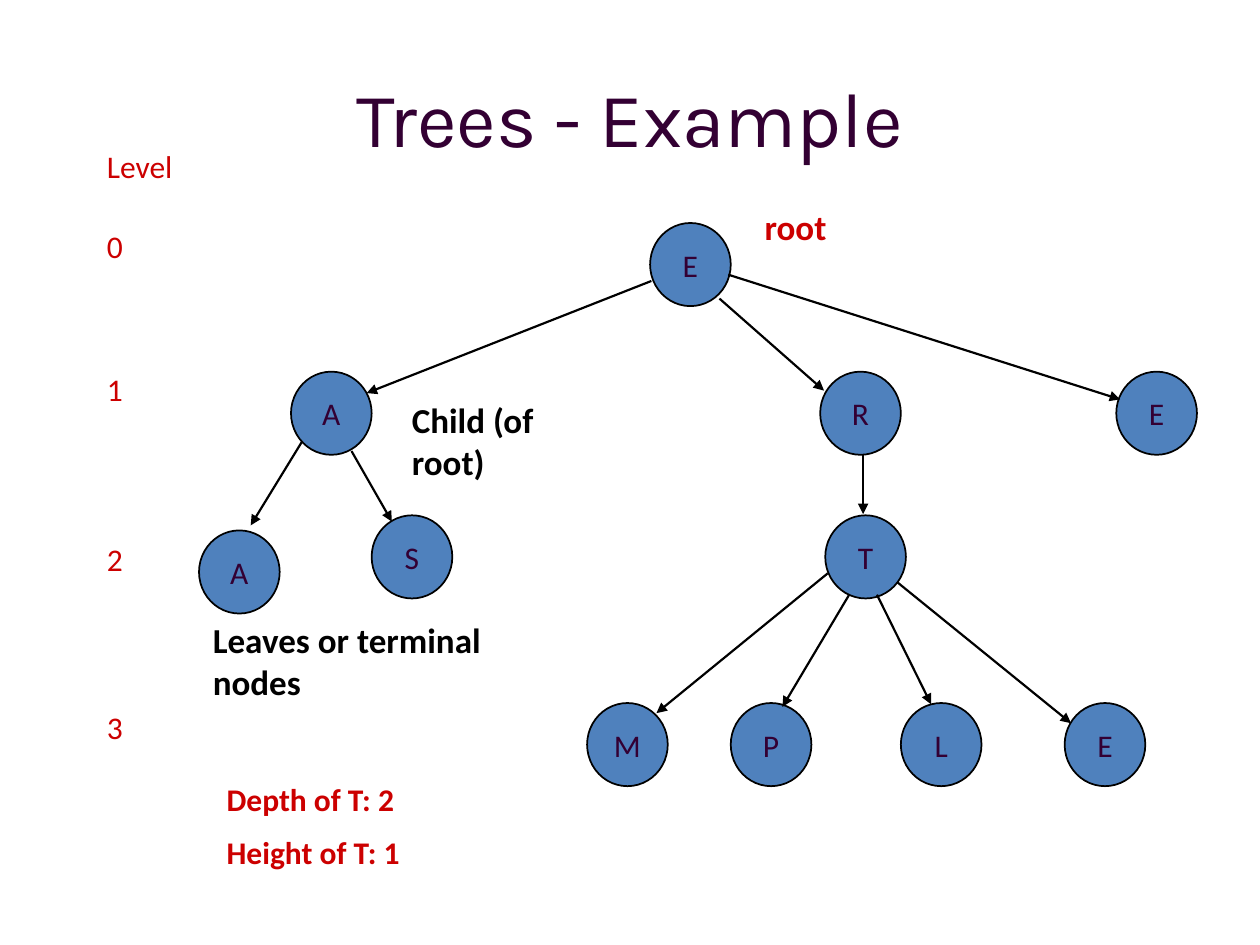
from dataclasses import dataclass

from lxml.etree import SubElement
from pptx import Presentation
from pptx.dml.color import RGBColor
from pptx.enum.shapes import MSO_CONNECTOR, MSO_SHAPE
from pptx.enum.text import MSO_ANCHOR, PP_ALIGN
from pptx.oxml.ns import qn
from pptx.util import Inches, Pt


@dataclass(frozen=True)
class Theme:
    heading_font: str = "Karla"
    body_font: str = "Calibri"
    plum: RGBColor = RGBColor(0x33, 0x00, 0x33)
    red: RGBColor = RGBColor(0xCC, 0x00, 0x00)
    black: RGBColor = RGBColor(0, 0, 0)
    node_fill: RGBColor = RGBColor(0x4F, 0x81, 0xBD)
    title_size: int = 44
    note_size: int = 20
    text_size: int = 18
    node_line: float = 1
    edge_line: float = 1.25


THEME = Theme()
NODE_WIDTH, NODE_HEIGHT = 0.64, 0.66

# Positions below are in inches from the top left of the tree's box.
LEAF_ROW = 4.08
NODES = [
    ("E", 3.66, 0.27),
    ("A", 0.81, 1.45), ("R", 5.01, 1.45), ("E", 7.36, 1.45),
    ("A", 0.08, 2.71), ("S", 1.45, 2.59), ("T", 5.05, 2.59),
    ("M", 3.16, LEAF_ROW), ("P", 4.3, LEAF_ROW),
    ("L", 5.65, LEAF_ROW), ("E", 6.95, LEAF_ROW),
]
EDGES = [
    # root to its children
    ((3.67, 0.73), (1.41, 1.62)),
    ((4.21, 0.87), (5.04, 1.6)),
    ((4.28, 0.68), (7.39, 1.67)),
    # A to its children
    ((0.9, 2.0), (0.49, 2.67)),
    ((1.29, 2.08), (1.61, 2.64)),
    # R to T
    ((5.35, 2.11), (5.35, 2.58)),
    # T to its children
    ((5.07, 3.05), (3.71, 4.16)),
    ((5.24, 3.22), (4.71, 4.11)),
    ((5.46, 3.22), (5.89, 4.09)),
    ((5.62, 3.12), (7.0, 4.24)),
]
NOTES = [
    (["root"], (4.47, 0.08, 0.92, 0.43), THEME.note_size, THEME.red),
    (["Leaves or terminal nodes"], (0.09, 3.36, 2.35, 0.77), THEME.note_size, THEME.black),
    (["Child (of root)"], (1.67, 1.61, 1.75, 0.77), THEME.note_size, THEME.black),
    (["Depth of T: 2", "Height of T: 1"], (0.2, 4.64, 2.72, 1.1), THEME.text_size, THEME.red),
]
LEVELS = [("Level", 0, 1.14), ("0", 0.63, 0.54), ("1", 1.77, 0.54),
          ("2", 3.12, 0.54), ("3", 4.45, 0.54)]


def add_run(paragraph, text, size, color, bold=False, font=THEME.body_font):
    run = paragraph.add_run()
    run.text = text
    run.font.name = font
    run.font.size = Pt(size)
    run.font.bold = bold
    run.font.color.rgb = color


def add_label(shapes, lines, left, top, width, height, size, color, bold=False):
    label = shapes.add_textbox(left, top, width, height)
    frame = label.text_frame
    frame.word_wrap = True
    for index, line in enumerate(lines):
        paragraph = frame.add_paragraph() if index else frame.paragraphs[0]
        if index:
            paragraph.space_before = Pt(size / 2)
        add_run(paragraph, line, size, color, bold)


def add_node(shapes, letter, left, top):
    node = shapes.add_shape(MSO_SHAPE.OVAL, left, top, Inches(NODE_WIDTH), Inches(NODE_HEIGHT))
    node.shadow.inherit = False
    node.fill.solid()
    node.fill.fore_color.rgb = THEME.node_fill
    node.line.color.rgb = THEME.black
    node.line.width = Pt(THEME.node_line)
    frame = node.text_frame
    frame.word_wrap = False
    frame.vertical_anchor = MSO_ANCHOR.MIDDLE
    frame.paragraphs[0].alignment = PP_ALIGN.CENTER
    add_run(frame.paragraphs[0], letter, THEME.text_size, THEME.plum)


def add_edge(shapes, *ends):
    edge = shapes.add_connector(MSO_CONNECTOR.STRAIGHT, *ends)
    edge.line.color.rgb = THEME.black
    edge.line.width = Pt(THEME.edge_line)
    SubElement(edge.line._get_or_add_ln(), qn("a:tailEnd"), type="triangle")
    SubElement(edge._element.spPr, qn("a:effectLst"))


def place_title(slide, left, top, width, height):
    title = slide.shapes.title
    title.left, title.top, title.width, title.height = left, top, width, height
    frame = title.text_frame
    frame.vertical_anchor = MSO_ANCHOR.MIDDLE
    paragraph = frame.paragraphs[0]
    paragraph.alignment = PP_ALIGN.CENTER
    add_run(paragraph, "Trees - Example", THEME.title_size, THEME.plum, font=THEME.heading_font)


def place_tree(slide, left, top):
    tree = slide.shapes.add_group_shape().shapes
    for letter, x, y in NODES:
        add_node(tree, letter, left + Inches(x), top + Inches(y))
    for (x1, y1), (x2, y2) in EDGES:
        add_edge(tree, left + Inches(x1), top + Inches(y1), left + Inches(x2), top + Inches(y2))
    for lines, (x, y, width, height), size, color in NOTES:
        add_label(tree, lines, left + Inches(x), top + Inches(y),
                  Inches(width), Inches(height), size, color, bold=True)


def place_levels(slide, left, top):
    for text, y, width in LEVELS:
        add_label(slide.shapes, [text], left, top + Inches(y),
                  Inches(width), Inches(0.5), THEME.text_size, THEME.red)


def main():
    deck = Presentation()
    deck.slide_width, deck.slide_height = Inches(10), Inches(7.5)
    slide = deck.slides.add_slide(deck.slide_layouts.get_by_name("Title Only"))
    place_title(slide, Inches(0.5), Inches(0.3), Inches(9), Inches(1.25))
    place_tree(slide, Inches(1.5), Inches(1.5))
    place_levels(slide, Inches(0.75), Inches(1.12))
    deck.save("out.pptx")


if __name__ == "__main__":
    main()
